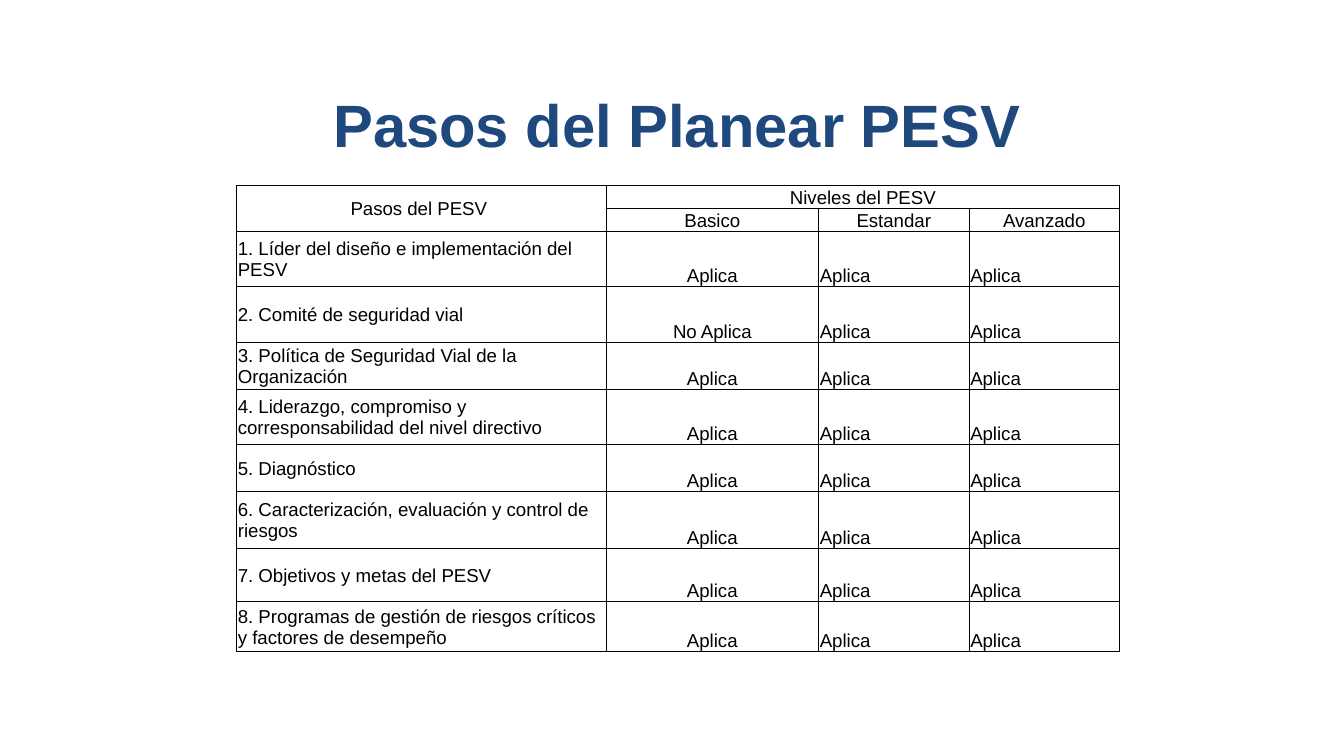
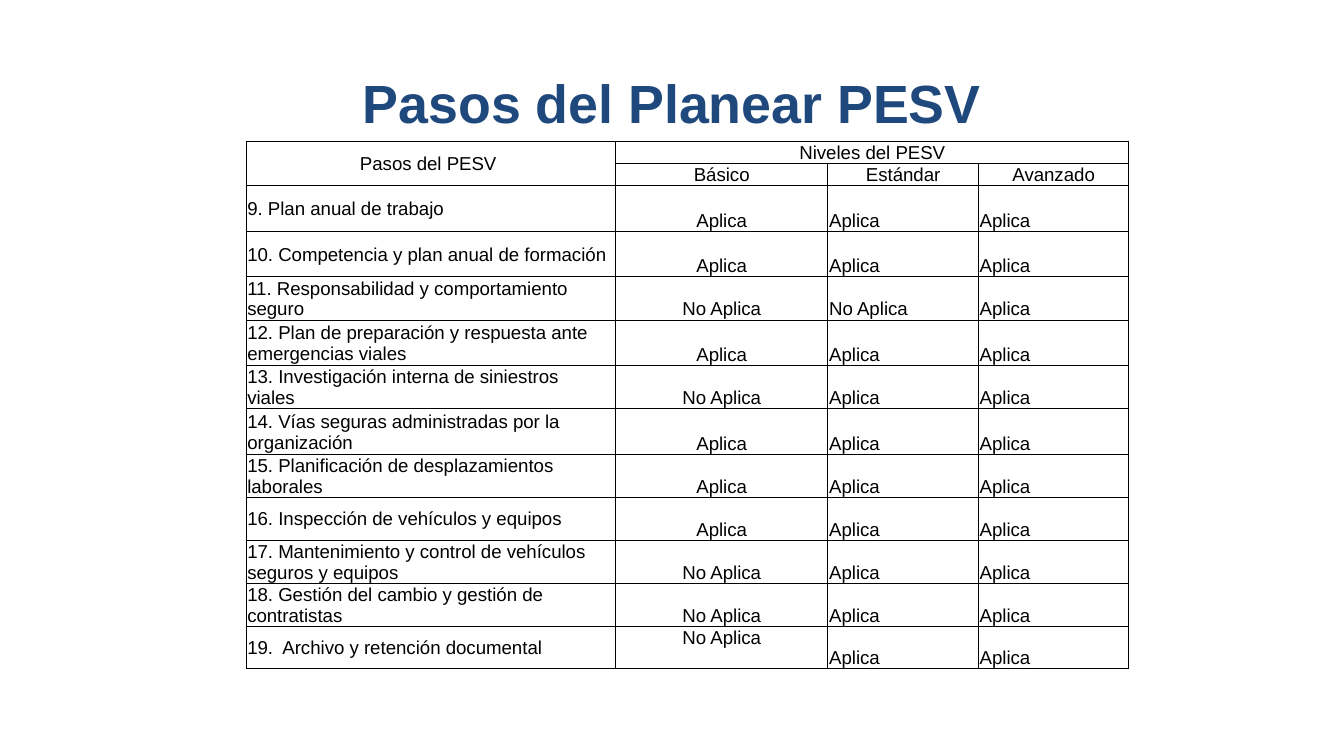
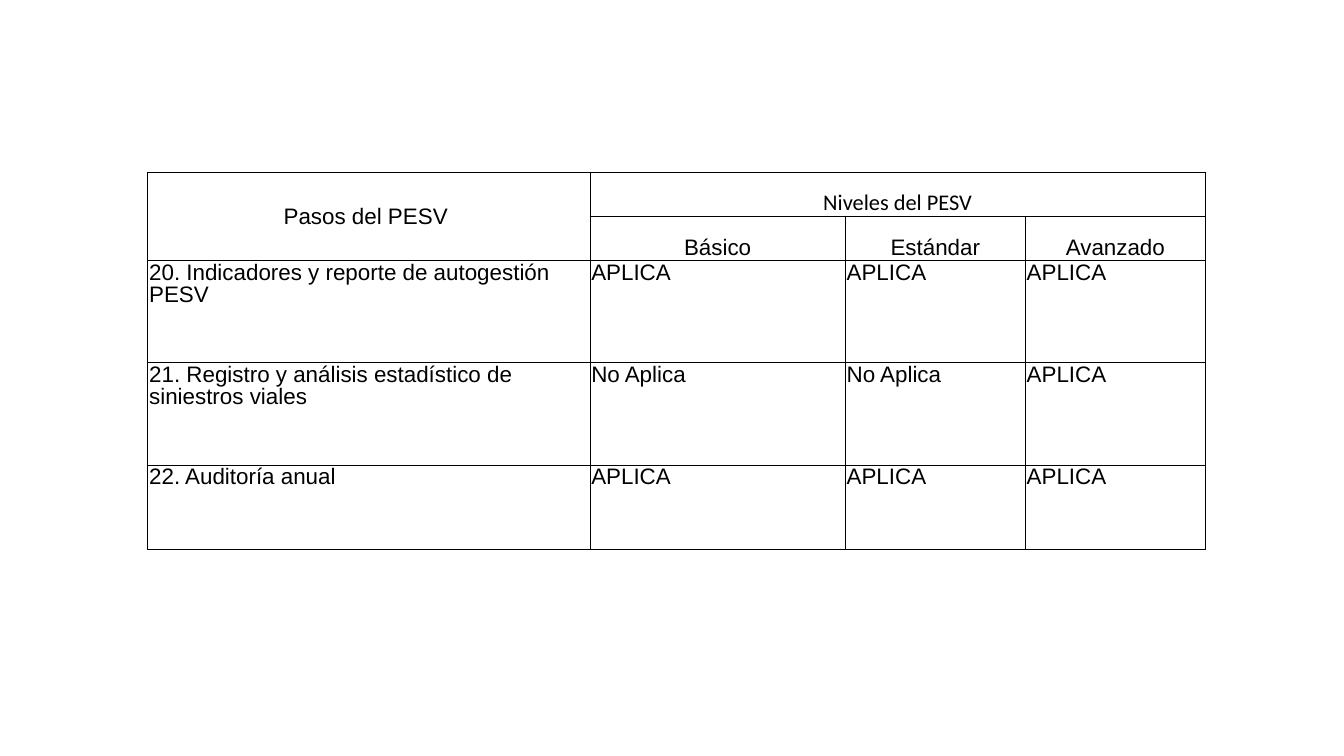
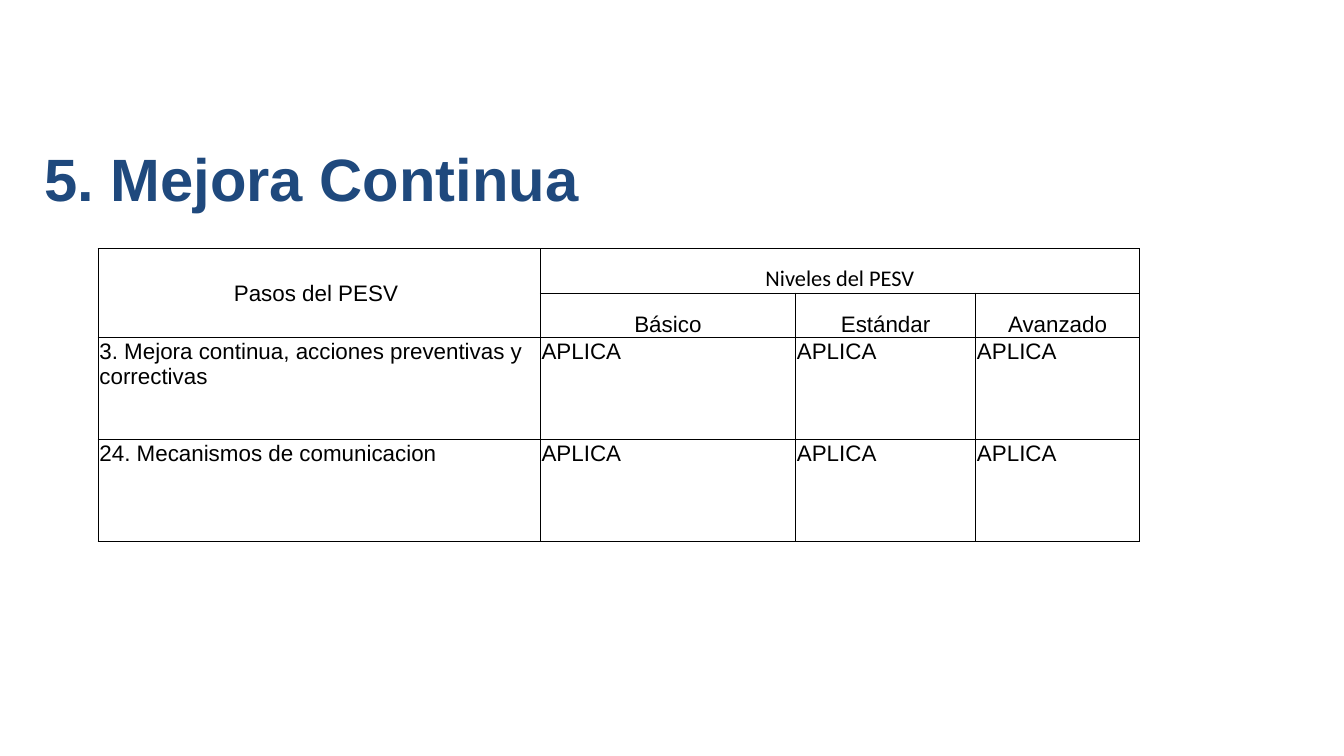
import copy

import lxml.etree
import pptx
import pptx.dml.color
import pptx.enum.text
import pptx.oxml
import pptx.oxml.ns
import pptx.util

Inches = pptx.util.Inches
Pt = pptx.util.Pt
Align = pptx.enum.text.PP_ALIGN
Anchor = pptx.enum.text.MSO_ANCHOR
qn = pptx.oxml.ns.qn

NAVY = pptx.dml.color.RGBColor(0x1F, 0x49, 0x7D)
BLACK = pptx.dml.color.RGBColor(0, 0, 0)
WHITE = pptx.dml.color.RGBColor(0xFF, 0xFF, 0xFF)

TITLE_ONLY, BLANK = 5, 6
CELL_INSET = 0.01
BORDER_WIDTH = Pt(0.5)
BORDER_SIDES = ("lnL", "lnR", "lnT", "lnB")

APPLIES = ("Aplica",) * 3
NOT_BASIC = ("No Aplica", "Aplica", "Aplica")
ADVANCED_ONLY = ("No Aplica", "No Aplica", "Aplica")
APPLIES_CAPS = ("APLICA",) * 3
ADVANCED_ONLY_CAPS = ("No Aplica", "No Aplica", "APLICA")

LEVELS = ("Básico", "Estándar", "Avanzado")
PLAIN_LEVELS = ("Basico", "Estandar", "Avanzado")

FIRST_STEPS = [
    ("1. Líder del diseño e implementación del\vPESV", APPLIES),
    ("2. Comité de seguridad vial", NOT_BASIC),
    ("3. Política de Seguridad Vial de la Organización", APPLIES),
    ("4. Liderazgo, compromiso y corresponsabilidad del nivel directivo", APPLIES),
    ("5. Diagnóstico", APPLIES),
    ("6. Caracterización, evaluación y control de riesgos", APPLIES),
    ("7. Objetivos y metas del PESV", APPLIES),
    ("8. Programas de gestión de riesgos críticos y factores de desempeño", APPLIES),
]
LATER_STEPS = [
    ("9. Plan anual de trabajo", APPLIES),
    ("10. Competencia y plan anual de formación", APPLIES),
    ("11. Responsabilidad y comportamiento seguro", ADVANCED_ONLY),
    ("12. Plan de preparación y respuesta ante emergencias viales", APPLIES),
    ("13. Investigación interna de siniestros\vviales", NOT_BASIC),
    ("14. Vías seguras administradas por la organización", APPLIES),
    ("15. Planificación de desplazamientos laborales", APPLIES),
    ("16. Inspección de vehículos y equipos", APPLIES),
    ("17. Mantenimiento y control de vehículos seguros y equipos", NOT_BASIC),
    ("18. Gestión del cambio y gestión de contratistas", NOT_BASIC),
    ("19.  Archivo y retención documental", NOT_BASIC),
]
TRACKING_STEPS = [
    ("20. Indicadores y reporte de autogestión PESV", APPLIES_CAPS),
    ("21. Registro y análisis estadístico de siniestros viales", ADVANCED_ONLY_CAPS),
    ("22. Auditoría anual", APPLIES_CAPS),
]
IMPROVEMENT_STEPS = [
    ("3. Mejora continua, acciones preventivas y correctivas", APPLIES_CAPS),
    ("24. Mecanismos de comunicacion", APPLIES_CAPS),
]


def write_text(frame, text, size, font="Arial", color=BLACK, bold=False,
               align=Align.LEFT, line_spacing=None):
    para = frame.paragraphs[0]
    para.text = text
    para.alignment = align
    if line_spacing:
        para.line_spacing = Pt(line_spacing)
    for span in para.runs:
        span.font.name = font
        span.font.size = Pt(size)
        span.font.bold = bold
        span.font.color.rgb = color
    for line_break in para._p.findall(qn("a:br")):
        line_break.append(copy.deepcopy(para.runs[0]._r.rPr))


def add_title(page, text, box, size=32, align=Align.CENTER):
    title = page.shapes.title
    title.left, title.top, title.width, title.height = map(Inches, box)
    frame = title.text_frame
    frame.word_wrap = True
    frame.auto_size = pptx.enum.text.MSO_AUTO_SIZE.NONE
    frame.vertical_anchor = Anchor.MIDDLE
    write_text(frame, text, size, color=NAVY, bold=True, align=align)


def style_cell(cell):
    cell.fill.solid()
    cell.fill.fore_color.rgb = WHITE
    cell.margin_left = cell.margin_top = cell.margin_right = Inches(CELL_INSET)
    cell.margin_bottom = 0
    properties = cell._tc.get_or_add_tcPr()
    for index, side in enumerate(BORDER_SIDES):
        line = lxml.etree.Element(qn("a:" + side), w=str(BORDER_WIDTH))
        fill = lxml.etree.SubElement(line, qn("a:solidFill"))
        lxml.etree.SubElement(fill, qn("a:srgbClr"), val=str(BLACK))
        properties.insert(index, line)


def fill_cell(cell, text, size, anchor, **text_format):
    cell.vertical_anchor = anchor
    write_text(cell.text_frame, text, size, **text_format)


def add_steps_table(page, box, columns, rows, steps, size, levels=LEVELS,
                    heading="Pasos del PESV ", levels_font="Arial",
                    top_aligned=False, line_spacing=None):
    graphic = page.shapes.add_table(len(rows), len(columns), *map(Inches, box))
    table = graphic.table
    table.first_row = table.horz_banding = False
    for column, width in zip(table.columns, columns):
        column.width = Inches(width)
    for row, height in zip(table.rows, rows):
        row.height = Inches(height)
    graphic.width, graphic.height = map(Inches, box[2:])
    for cell in table.iter_cells():
        style_cell(cell)

    table.cell(0, 0).merge(table.cell(1, 0))
    table.cell(0, 1).merge(table.cell(0, 3))
    fill_cell(table.cell(0, 0), heading, size, Anchor.MIDDLE, align=Align.CENTER)
    fill_cell(table.cell(0, 1), "Niveles del PESV", size, Anchor.BOTTOM,
              font=levels_font, align=Align.CENTER)
    for column, level in enumerate(levels, 1):
        fill_cell(table.cell(1, column), level, size, Anchor.BOTTOM, align=Align.CENTER)

    for row, (step, statuses) in enumerate(steps, 2):
        for column, text in enumerate((step, *statuses)):
            cell = table.cell(row, column)
            if top_aligned:
                anchor, align = Anchor.TOP, Align.LEFT
                cell.margin_bottom = Inches(CELL_INSET)
            else:
                anchor = Anchor.BOTTOM if column else Anchor.MIDDLE
                align = Align.CENTER if column == 1 else Align.LEFT
            fill_cell(cell, text, size, anchor, align=align, line_spacing=line_spacing)
    return table


def add_page(deck, layout=TITLE_ONLY):
    return deck.slides.add_slide(deck.slide_layouts[layout])


def build_first_steps(deck):
    page = add_page(deck)
    add_title(page, "Pasos del Planear PESV", (0.73, 0.58, 8.62, 0.68))
    add_steps_table(page, (1.76, 1.38, 6.57, 3.49), (2.75, 1.58, 1.12, 1.12),
                    (0.17, 0.17, 0.41, 0.42, 0.35, 0.41, 0.35, 0.42, 0.4, 0.37),
                    FIRST_STEPS, 10, levels=PLAIN_LEVELS, heading="Pasos del PESV ")


def build_later_steps(deck):
    page = add_page(deck)
    add_title(page, "Pasos del Planear PESV", (0.69, 0.55, 8.62, 0.42), size=28.8)
    table = add_steps_table(
        page, (1.83, 1.05, 6.57, 4.09), (2.75, 1.58, 1.12, 1.12),
        (0.15, 0.15, 0.34, 0.34, 0.29, 0.34, 0.28, 0.34, 0.32, 0.32, 0.32, 0.3, 0.3),
        LATER_STEPS, 10)
    archive_status = table.cell(len(LATER_STEPS) + 1, 1)
    archive_status.margin_bottom = Inches(0.15)


def build_tracking(deck):
    page = add_page(deck, BLANK)
    add_steps_table(page, (1.1, 1.28, 7.88, 2.81), (3.29, 1.9, 1.34, 1.34),
                    (0.33, 0.33, 0.76, 0.76, 0.63), TRACKING_STEPS, 12,
                    levels_font="Calibri", top_aligned=True, line_spacing=12.2)


def build_improvement(deck):
    page = add_page(deck)
    add_title(page, "5. Mejora Continua", (0.23, 0.6, 9.04, 1.45), align=Align.JUSTIFY)
    add_steps_table(page, (0.73, 1.85, 7.76, 2.18), (3.29, 1.9, 1.34, 1.22),
                    (0.33, 0.33, 0.76, 0.76), IMPROVEMENT_STEPS, 12,
                    levels_font="Calibri", top_aligned=True)


def main():
    deck = pptx.Presentation()
    deck.slide_width = Inches(10)
    deck.slide_height = deck.slide_width * 9 // 16
    build_first_steps(deck)
    build_later_steps(deck)
    build_tracking(deck)
    build_improvement(deck)
    deck.save("out.pptx")


if __name__ == "__main__":
    main()
